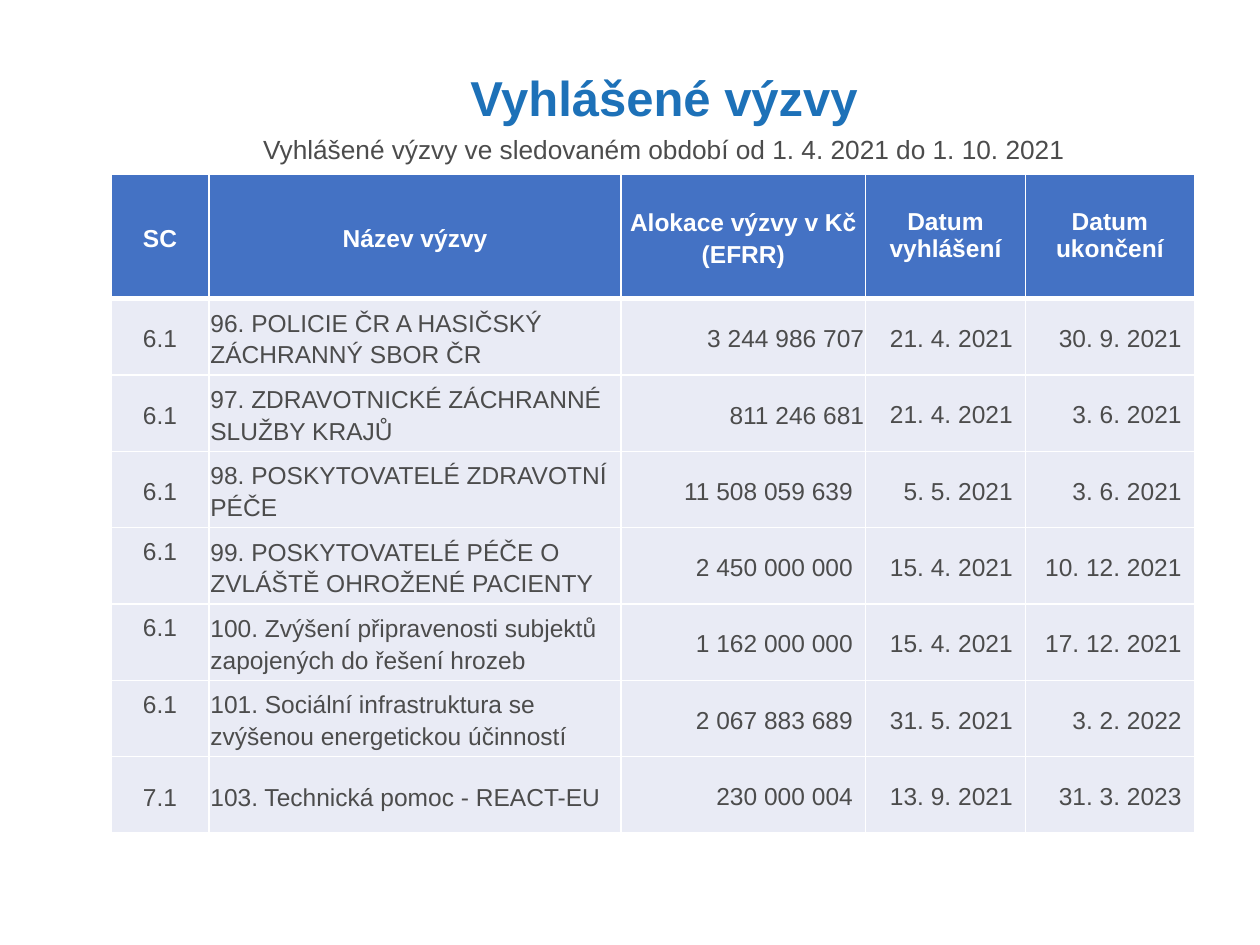
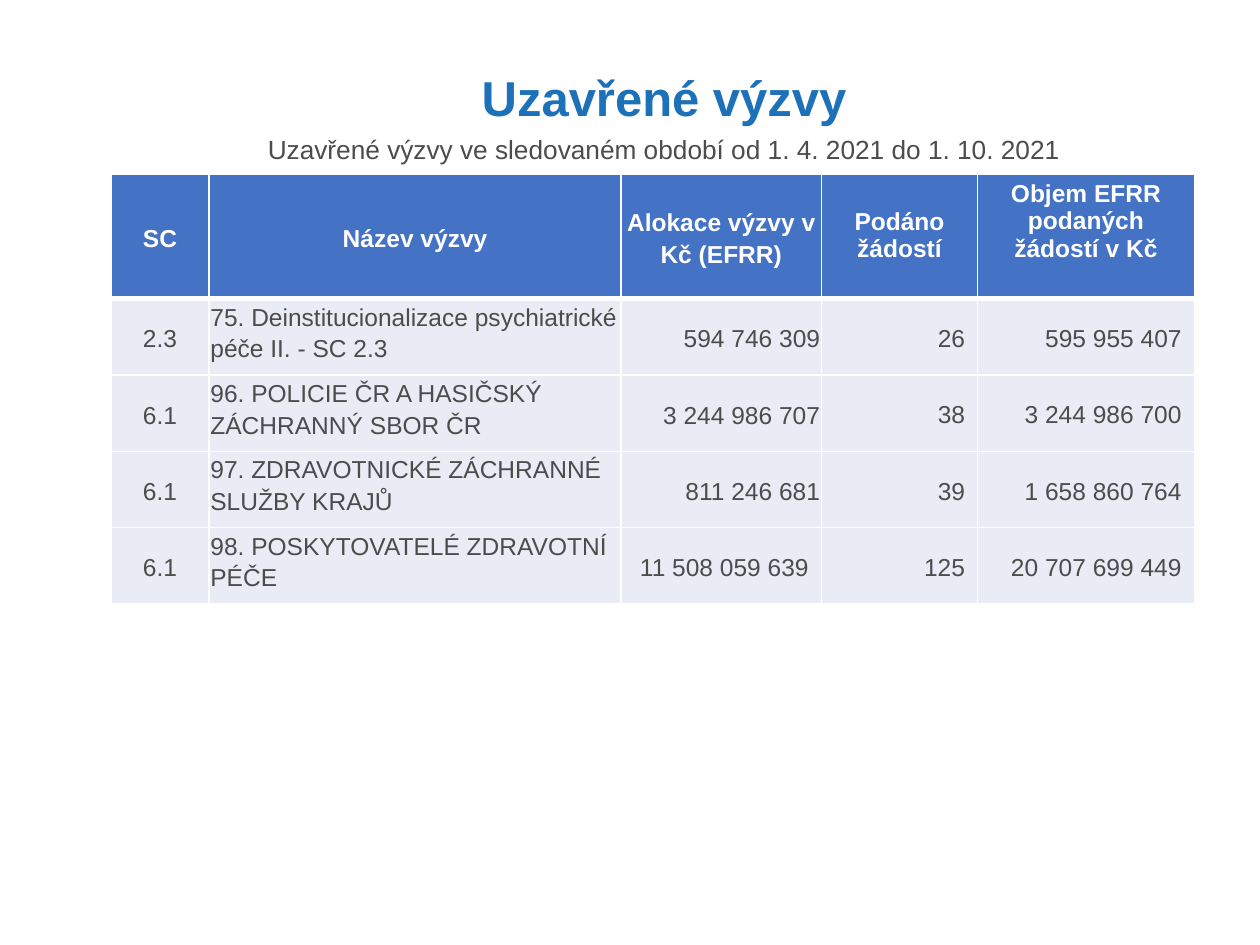
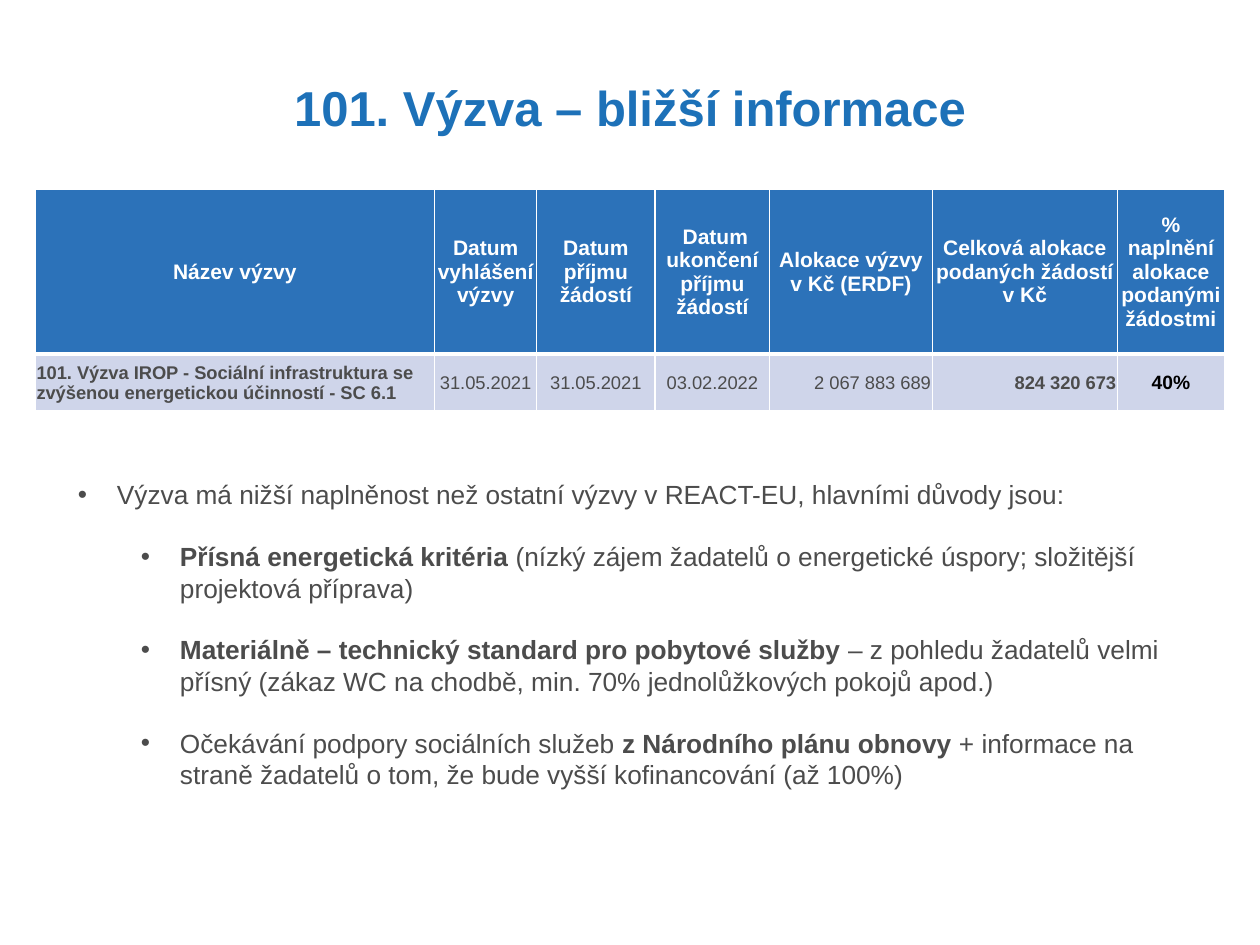
import dataclasses

import pptx
import pptx.dml.color
import pptx.enum.text
import pptx.oxml
import pptx.oxml.ns
import pptx.util

ALIGN = pptx.enum.text.PP_ALIGN
ANCHOR = pptx.enum.text.MSO_ANCHOR
ALIGNMENTS = {"l": ALIGN.LEFT, "c": ALIGN.CENTER, "r": ALIGN.RIGHT}


@dataclasses.dataclass(frozen=True)
class Theme:
    """Colours, type sizes and line widths shared by the slides."""

    font: str = "Arial"
    title: str = "1D71B8"
    text: str = "4C4C4C"
    strong: str = "000000"
    white: str = "FFFFFF"
    calls_head: str = "4472C4"
    calls_body: str = "E9EBF5"
    detail_head: str = "2C72B9"
    detail_body: str = "CFD5EA"
    title_size: float = 28
    text_size: float = 15
    calls_size: float = 14
    head_size: float = 12
    ratio_size: float = 11
    detail_size: float = 10.5
    thin: float = 1
    thick: float = 3
    gap: float = 17.25


@dataclasses.dataclass(frozen=True)
class Box:
    """A region measured in columns and rows of the slide grid."""

    left: float
    top: float
    width: float
    height: float

    def place(self):
        """Return the region as slide lengths."""
        return [grid(value) for value in dataclasses.astuple(self)]


THEME = Theme()
COLUMNS, ROWS = 100, 75
UNIT = 0.1
CALLS_TITLE = Box(9.7, 0, 86, 16)
CALLS_SUBTITLE = Box(9.7, 10.1, 86, 44.8)
CALLS_ORIGIN = (8.8, 13.8)
CALLS_HEAD, CALLS_ROW = 9.9, 6.06

TIGHT = {"margin_left": 0.1, "margin_top": 0.1, "margin_right": 0.1, "margin_bottom": 0}
LOOSE = {"margin_left": 1, "margin_top": 0.5, "margin_right": 1, "margin_bottom": 0.5}
DROPPED = {**LOOSE, "margin_top": 2.7}
RAISED = {**TIGHT, "margin_bottom": 2.6}

PLAIN = {"size": THEME.text_size, "bold": False, "color": THEME.text}
HEADING = {"size": THEME.title_size, "bold": True, "color": THEME.title}


def grid(value):
    """Turn grid steps into a slide length."""
    return pptx.util.Inches(value * UNIT)


def apply(target, values):
    """Set attributes from a dict of format values."""
    for name, value in values.items():
        setattr(target, name, value)


def write(para, text, size, bold, color):
    """Add one span of formatted text to a paragraph."""
    span = para.add_run()
    span.text = text
    apply(span.font, {"name": THEME.font, "size": pptx.util.Pt(size), "bold": bold})
    span.font.color.rgb = pptx.dml.color.RGBColor.from_string(color)


def text_box(page, box):
    """Add a wrapping text box and return its frame."""
    frame = page.shapes.add_textbox(*box.place()).text_frame
    frame.word_wrap = True
    return frame


def heading(page, box, text):
    """Add the slide title in the middle of its box."""
    frame = text_box(page, box)
    frame.vertical_anchor = ANCHOR.MIDDLE
    apply(frame.paragraphs[0], {"alignment": ALIGN.CENTER, "line_spacing": 0.9})
    write(frame.paragraphs[0], text, **HEADING)


def subtitle(page, box, text):
    """Add the centred line under the title."""
    para = text_box(page, box).paragraphs[0]
    para.alignment = ALIGN.CENTER
    write(para, text, **PLAIN)


def border(cell, widths):
    """Draw white cell borders of the given widths."""
    for side, width in widths.items():
        cell._tc.get_or_add_tcPr().append(pptx.oxml.parse_xml(
            f'<a:ln{side} {pptx.oxml.ns.nsdecls("a")} w="{pptx.util.Pt(width)}">'
            f'<a:solidFill><a:srgbClr val="{THEME.white}"/></a:solidFill></a:ln{side}>'))


def fill_cell(cell, text, fill, widths, style):
    """Fill one table cell with its text, colour and borders."""
    border(cell, widths)
    cell.fill.solid()
    cell.fill.fore_color.rgb = pptx.dml.color.RGBColor.from_string(fill)
    apply(cell, {name: grid(value) for name, value in style["insets"].items()})
    cell.vertical_anchor = style["anchor"]
    para = cell.text_frame.paragraphs[0]
    apply(para, {"alignment": ALIGNMENTS[style["align"]], "line_spacing": style["spacing"]})
    write(para, text, **{name: style[name] for name in PLAIN})


def table(page, origin, widths, heights, rows, fills, style_of):
    """Add a table with a heavy rule under its heading row."""
    box = Box(*origin, sum(widths), sum(heights))
    made = page.shapes.add_table(len(rows), len(widths), *box.place()).table
    made.horz_banding = False
    for column, width in zip(made.columns, widths):
        column.width = grid(width)
    for index, (row, height, texts) in enumerate(zip(made.rows, heights, rows)):
        row.height = grid(height)
        lines = {"L": THEME.thin, "R": THEME.thin,
                 "T": THEME.thick if index == 1 else THEME.thin,
                 "B": THEME.thin if index else THEME.thick}
        for place, text in enumerate(texts):
            fill_cell(row.cells[place], text, fills[min(index, 1)], lines, style_of(index, place))


def calls_slide(page, title, note, widths, rows, overrides, tight_amounts):
    """Build a slide that lists calls in a five-column table."""

    def style_of(row, column):
        """Choose the format of one cell of the list."""
        tight = column < 2 or column == 2 and row <= tight_amounts
        style = {**PLAIN, "size": THEME.calls_size, "align": "clrrr"[column],
                 "anchor": ANCHOR.MIDDLE, "spacing": 1.15,
                 "insets": TIGHT if tight else LOOSE}
        if row == 0:
            style.update(bold=True, color=THEME.white, align="c")
            if column > 2:
                style.update(anchor=ANCHOR.TOP, spacing=1.0, insets=DROPPED)
        style.update(overrides.get((row, column), {}))
        return style

    heading(page, CALLS_TITLE, title)
    subtitle(page, CALLS_SUBTITLE, note)
    heights = [CALLS_HEAD] + [CALLS_ROW] * (len(rows) - 1)
    table(page, CALLS_ORIGIN, widths, heights, rows,
          (THEME.calls_head, THEME.calls_body), style_of)


def detail_style(row, column):
    """Choose the format of one cell of the single-call table."""
    style = {**PLAIN, "size": THEME.detail_size, "bold": column in (0, 5, 6),
             "align": "lcccrrc"[column], "anchor": ANCHOR.MIDDLE,
             "spacing": 1.0, "insets": TIGHT}
    if row == 0:
        style.update(size=THEME.head_size, bold=True, color=THEME.white, align="c")
    elif column == 6:
        style.update(size=THEME.ratio_size, color=THEME.strong)
    return style


def reasons(page, box, points):
    """Add a bulleted list of levels and spans."""
    frame = text_box(page, box)
    frame.auto_size = pptx.enum.text.MSO_AUTO_SIZE.SHAPE_TO_FIT_TEXT
    for index, (level, spans) in enumerate(points):
        para = frame.add_paragraph() if index else frame.paragraphs[0]
        properties = para._p.get_or_add_pPr()
        properties.set("marL", str(grid(3.1 + 5 * level)))
        properties.set("indent", str(grid(-3.1)))
        properties.append(pptx.oxml.parse_xml(
            f'<a:buFont {pptx.oxml.ns.nsdecls("a")} typeface="{THEME.font}"/>'))
        properties.append(pptx.oxml.parse_xml(
            f'<a:buChar {pptx.oxml.ns.nsdecls("a")} char="•"/>'))
        para.level = level
        if index:
            para.space_before = pptx.util.Pt(THEME.gap)
        for text, bold in spans:
            write(para, text, **{**PLAIN, "bold": bold})


def detail_slide(page, title, rows, points):
    """Build a slide on one call with its figures and reasons."""
    heading(page, Box(7, 2.5, 86, 12.5), title)
    table(page, (2.8, 15), (31.7, 8.1, 9.4, 9.1, 12.9, 14.7, 8.5), (13.1, 4.5), rows,
          (THEME.detail_head, THEME.detail_body), detail_style)
    reasons(page, Box(5.2, 37.5, 87.8, 26.3), points)


ANNOUNCED = [
    ("SC", "Název výzvy", "Alokace výzvy v Kč (EFRR)", "Datum vyhlášení", "Datum ukončení"),
    ("6.1", "96. POLICIE ČR A HASIČSKÝ ZÁCHRANNÝ SBOR ČR",
     "3 244 986 707", "21. 4. 2021", "30. 9. 2021"),
    ("6.1", "97. ZDRAVOTNICKÉ ZÁCHRANNÉ SLUŽBY KRAJŮ",
     "811 246 681", "21. 4. 2021", "3. 6. 2021"),
    ("6.1", "98. POSKYTOVATELÉ ZDRAVOTNÍ PÉČE",
     "11 508 059 639", "5. 5. 2021", "3. 6. 2021"),
    ("6.1", "99. POSKYTOVATELÉ PÉČE O ZVLÁŠTĚ OHROŽENÉ PACIENTY",
     "2 450 000 000", "15. 4. 2021", "10. 12. 2021"),
    ("6.1", "100. Zvýšení připravenosti subjektů zapojených do řešení hrozeb",
     "1 162 000 000", "15. 4. 2021", "17. 12. 2021"),
    ("6.1", "101. Sociální infrastruktura se zvýšenou energetickou účinností",
     "2 067 883 689", "31. 5. 2021", "3. 2. 2022"),
    ("7.1", "103. Technická pomoc - REACT-EU",
     "230 000 004", "13. 9. 2021", "31. 3. 2023"),
]
CLOSED = [
    ("SC", "Název výzvy", "Alokace výzvy v Kč (EFRR)", "Podáno žádostí",
     "Objem EFRR podaných žádostí v Kč"),
    ("2.3", "75. Deinstitucionalizace psychiatrické péče II. - SC 2.3",
     "594 746 309", "26", "595 955 407"),
    ("6.1", "96. POLICIE ČR A HASIČSKÝ ZÁCHRANNÝ SBOR ČR",
     "3 244 986 707", "38", "3 244 986 700"),
    ("6.1", "97. ZDRAVOTNICKÉ ZÁCHRANNÉ SLUŽBY KRAJŮ",
     "811 246 681", "39", "1 658 860 764"),
    ("6.1", "98. POSKYTOVATELÉ ZDRAVOTNÍ PÉČE",
     "11 508 059 639", "125", "20 707 699 449"),
]
CALL_101 = [
    ("Název výzvy", "Datum vyhlášení výzvy", "Datum příjmu žádostí",
     " Datum ukončení příjmu žádostí", "Alokace výzvy v Kč (ERDF)",
     "Celková alokace podaných žádostí v Kč", "% naplnění alokace podanými žádostmi"),
    ("101. Výzva IROP - Sociální infrastruktura se zvýšenou energetickou účinností - SC 6.1",
     "31.05.2021", "31.05.2021", "03.02.2022", "2 067 883 689", "824 320 673", "40%"),
]
REASONS = [
    (0, [("Výzva má nižší naplněnost než ostatní výzvy v REACT-EU, hlavními důvody jsou:", False)]),
    (1, [("Přísná energetická kritéria ", True),
         ("(nízký zájem žadatelů o energetické úspory; složitější projektová příprava)", False)]),
    (1, [("Materiálně – technický standard pro pobytové služby ", True),
         ("– z pohledu žadatelů velmi přísný (zákaz WC na chodbě, min. 70% "
          "jednolůžkových pokojů apod.)", False)]),
    (1, [("Očekávání podpory sociálních služeb ", False),
         ("z Národního plánu obnovy ", True),
         ("+ informace na straně žadatelů o tom, že bude vyšší kofinancování (až 100%)", False)]),
]


def main():
    """Build and save the deck."""
    deck = pptx.Presentation()
    apply(deck, {"slide_width": grid(COLUMNS), "slide_height": grid(ROWS)})
    blank = deck.slide_layouts[6]
    calls_slide(deck.slides.add_slide(blank), "Vyhlášené výzvy",
                "Vyhlášené výzvy ve sledovaném období od 1. 4. 2021 do 1. 10. 2021",
                (7.8, 32.7, 19.4, 12.7, 13.4), ANNOUNCED,
                {(row, 0): {"insets": RAISED} for row in (4, 5, 6)}, 2)
    closed_styles = {(row, 1): {"anchor": ANCHOR.TOP} for row in range(1, len(CLOSED))}
    closed_styles[0, 4] = {"insets": LOOSE}
    calls_slide(deck.slides.add_slide(blank), "Uzavřené výzvy",
                "Uzavřené výzvy ve sledovaném období od 1. 4. 2021 do 1. 10. 2021",
                (7.8, 32.7, 15.9, 12.4, 17.2), CLOSED, closed_styles, 3)
    detail_slide(deck.slides.add_slide(blank), "101. Výzva – bližší informace",
                 CALL_101, REASONS)
    deck.save("out.pptx")


if __name__ == "__main__":
    main()
